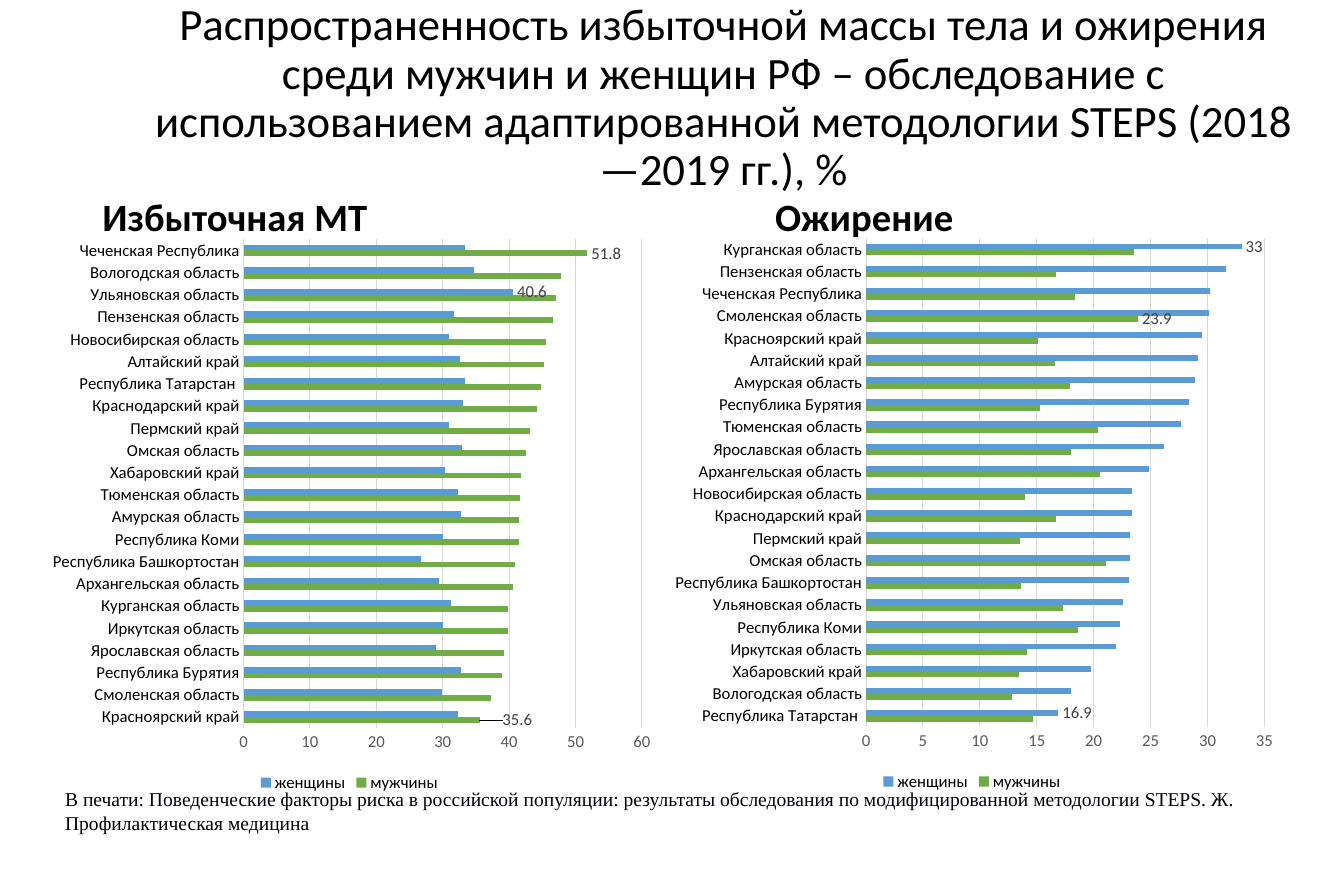
from dataclasses import dataclass

from pptx import Presentation
from pptx.chart.data import CategoryChartData
from pptx.dml.color import RGBColor
from pptx.enum.chart import XL_CHART_TYPE as ChartType, XL_LABEL_POSITION as LabelPosition
from pptx.enum.chart import XL_LEGEND_POSITION as LegendPosition, XL_TICK_MARK as TickMark
from pptx.enum.text import MSO_ANCHOR as Anchor, MSO_AUTO_SIZE as AutoSize, PP_ALIGN as Align
from pptx.oxml import parse_xml
from pptx.oxml.ns import nsdecls, qn
from pptx.util import Cm, Inches, Pt


@dataclass(frozen=True)
class Theme:
    font: str = "Calibri"
    source_font: str = "Times New Roman"
    text: str = "000000"
    source_text: str = "00000A"
    value_text: str = "595959"
    label_text: str = "404040"
    grid: str = "D9D9D9"
    men: str = "70AD47"
    women: str = "5B9BD5"
    title_size: float = 32.1
    heading_size: float = 27.7
    source_size: float = 14
    chart_size: float = 12


theme = Theme()


def style_font(font, size, color, name=theme.font, bold=False):
    font.name, font.size, font.bold = name, Pt(size), bold
    font.color.rgb = RGBColor.from_string(color)


def layout_xml(**parts):
    """Manual layout of a chart part, in fractions of the chart."""
    inner = "".join(f'<c:{key} val="{value}"/>' for key, value in parts.items())
    return parse_xml(f'<c:layout {nsdecls("c")}><c:manualLayout>{inner}</c:manualLayout></c:layout>')


# Data: region, men, women, from the bottom row to the top
overweight = [
    ("Красноярский край", 35.6, 32.3), ("Смоленская область", 37.3, 29.9),
    ("Республика Бурятия", 39, 32.8), ("Ярославская область", 39.2, 29),
    ("Иркутская область", 39.9, 30), ("Курганская область", 39.9, 31.3),
    ("Архангельская область", 40.6, 29.5), ("Республика Башкортостан", 40.9, 26.7),
    ("Республика Коми", 41.5, 30.1), ("Амурская область", 41.5, 32.8),
    ("Тюменская область", 41.7, 32.3), ("Хабаровский край", 41.8, 30.3),
    ("Омская область", 42.5, 32.9), ("Пермский край", 43.2, 31),
    ("Краснодарский край", 44.2, 33), ("Республика Татарстан ", 44.8, 33.4),
    ("Алтайский край", 45.2, 32.6), ("Новосибирская область", 45.5, 31),
    ("Пензенская область", 46.6, 31.7), ("Ульяновская область", 47, 40.6),
    ("Вологодская область", 47.8, 34.7), ("Чеченская Республика", 51.8, 33.3),
]
obesity = [
    ("Республика Татарстан ", 14.7, 16.9), ("Вологодская область", 12.8, 18),
    ("Хабаровский край", 13.4, 19.8), ("Иркутская область", 14.1, 22),
    ("Республика Коми", 18.6, 22.3), ("Ульяновская область", 17.3, 22.6),
    ("Республика Башкортостан", 13.6, 23.1), ("Омская область", 21.1, 23.2),
    ("Пермский край", 13.5, 23.2), ("Краснодарский край", 16.7, 23.4),
    ("Новосибирская область", 14, 23.4), ("Архангельская область", 20.6, 24.9),
    ("Ярославская область", 18, 26.2), ("Тюменская область", 20.4, 27.7),
    ("Республика Бурятия", 15.3, 28.4), ("Амурская область", 17.9, 28.9),
    ("Алтайский край", 16.6, 29.2), ("Красноярский край", 15.1, 29.5),
    ("Смоленская область", 23.9, 30.1), ("Чеченская Республика", 18.4, 30.2),
    ("Пензенская область", 16.7, 31.6), ("Курганская область", 23.5, 33),
]

# Slide on the comparison layout, without its two content placeholders
prs = Presentation()
prs.slide_width = Cm(34)
prs.slide_height = Cm(22)
slide = prs.slides.add_slide(prs.slide_layouts[4])
title, overweight_heading, overweight_content, obesity_heading, obesity_content = slide.placeholders
for content in (overweight_content, obesity_content):
    content.element.getparent().remove(content.element)

# Title and the two headings
headings = [
    (title, "Распространенность избыточной массы тела и ожирения среди мужчин и женщин РФ – "
            "обследование с использованием адаптированной методологии STEPS (2018—2019 гг.), %",
     (1.38, 0.15, 11.65, 1.67), theme.title_size, Align.CENTER, Anchor.MIDDLE),
    (overweight_heading, "Избыточная МТ", (0.92, 1.83, 5.66, 0.61),
     theme.heading_size, Align.LEFT, Anchor.BOTTOM),
    (obesity_heading, "Ожирение", (7.62, 1.83, 5.66, 0.61),
     theme.heading_size, Align.LEFT, Anchor.BOTTOM),
]
for holder, wording, place, size, align, anchor in headings:
    holder.left, holder.top, holder.width, holder.height = map(Inches, place)
    frame = holder.text_frame
    frame.text = wording
    frame.auto_size, frame.vertical_anchor = AutoSize.NONE, anchor
    paragraph = frame.paragraphs[0]
    paragraph.alignment, paragraph.line_spacing, paragraph.space_before = align, 0.9, Pt(0)
    style_font(paragraph.font, size, theme.text, bold=holder is not title)

# Charts: rows, left, top, axis maximum, axis step, labelled rows of men and women
charts = [
    (overweight, 0.38, 2.27, 60, 10, [(0, 21), (19,)]),
    (obesity, 6.58, 2.26, 35, 5, [(18,), (0, 21)]),
]
for rows, left, top, maximum, step, labelled in charts:
    regions, men, women = zip(*rows)
    data = CategoryChartData()
    data.categories = regions
    data.add_series("мужчины", men)
    data.add_series("женщины", women)
    chart = slide.shapes.add_chart(ChartType.BAR_CLUSTERED, Inches(left), Inches(top),
                                   Inches(6.2), Inches(5.66), data).chart
    chart.has_title = False
    style_font(chart.font, theme.chart_size, theme.text)

    chart.has_legend = True
    chart.legend.position = LegendPosition.BOTTOM
    chart.legend.include_in_layout = False
    style_font(chart.legend.font, theme.chart_size, theme.text)

    # Axes
    region_axis, percent_axis = chart.category_axis, chart.value_axis
    for axis, color in ((region_axis, theme.text), (percent_axis, theme.value_text)):
        axis.major_tick_mark = axis.minor_tick_mark = TickMark.NONE
        style_font(axis.tick_labels.font, theme.chart_size, color)
    percent_axis.minimum_scale, percent_axis.maximum_scale = 0, maximum
    percent_axis.major_unit = step
    percent_axis.has_major_gridlines = True
    percent_axis.format.line.fill.background()
    for line in (region_axis.format.line, percent_axis.major_gridlines.format.line):
        line.color.rgb, line.width = RGBColor.from_string(theme.grid), Pt(0.75)

    # Bars and the labels of the extreme values
    plot = chart.plots[0]
    plot.gap_width, plot.overlap, plot.vary_by_categories = 182, 0, False
    for series, color, marked in zip(plot.series, (theme.men, theme.women), labelled):
        series.format.fill.solid()
        series.format.fill.fore_color.rgb = RGBColor.from_string(color)
        series.data_labels.show_value = False
        for row in marked:
            label = series.points[row].data_label
            style_font(label.font, theme.chart_size, theme.label_text)
            label.position = LabelPosition.OUTSIDE_END

    # Equal plot areas in both charts
    plot_area = chart._chartSpace.chart.plotArea
    for automatic in plot_area.findall(qn("c:layout")):
        plot_area.remove(automatic)
    plot_area.insert(0, layout_xml(layoutTarget="inner", xMode="edge", yMode="edge",
                                   x=0.33, y=0.02, w=0.64, h=0.86))

    # The lowest overweight value stands away from its bar
    if rows is overweight:
        lowest = plot_area.find(".//" + qn("c:dLbl"))
        lowest.find(qn("c:idx")).addnext(layout_xml(x=0.03, y=0))

# Source
source = slide.shapes.add_textbox(Inches(0.55), Inches(7.79), Inches(12.48), Inches(0.57)).text_frame
source.word_wrap = True
source.text = ("В печати: Поведенческие факторы риска в российской популяции: результаты обследования "
               "по модифицированной методологии STEPS. Ж. Профилактическая медицина")
style_font(source.paragraphs[0].font, theme.source_size, theme.source_text, theme.source_font)

prs.save("out.pptx")
